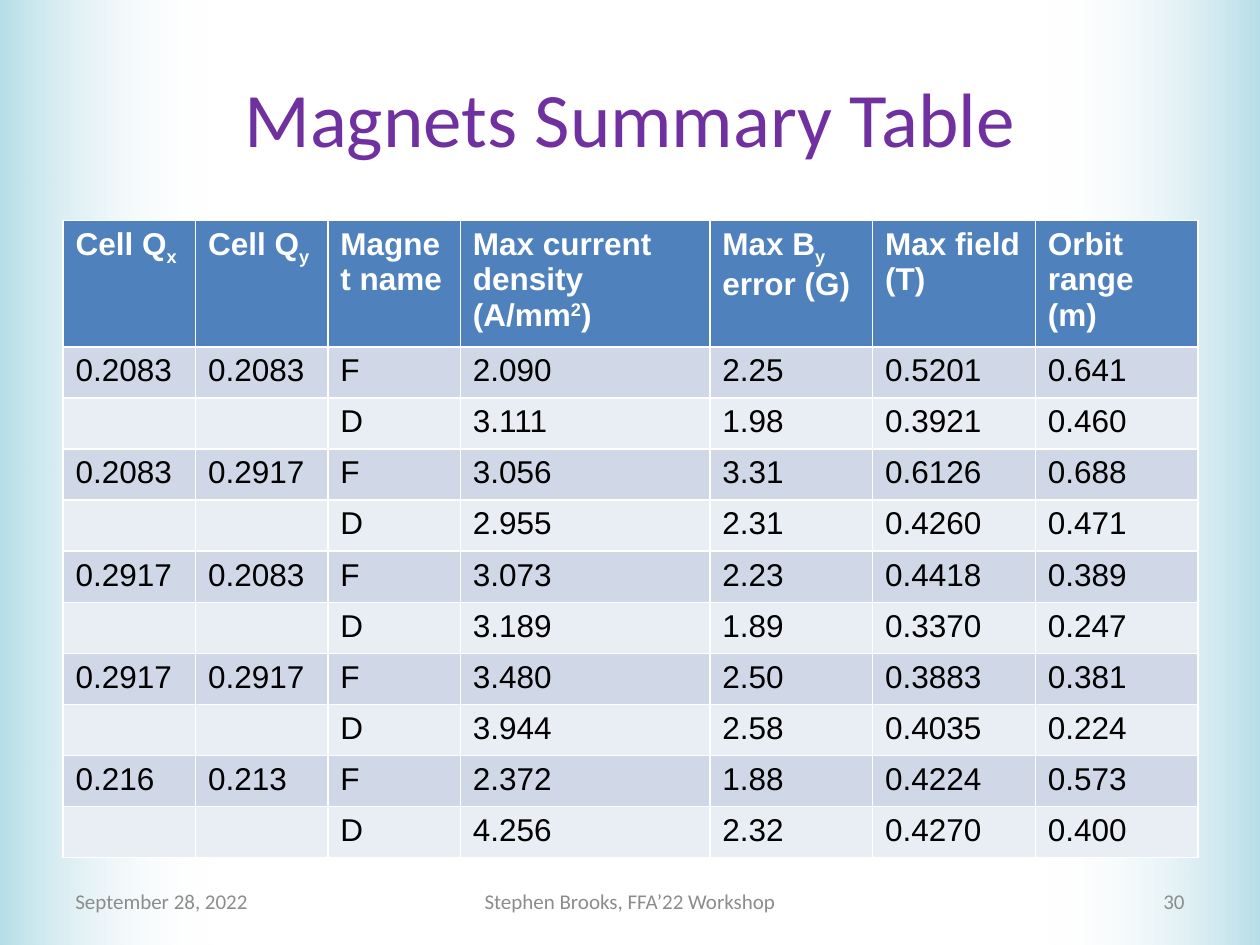
from lxml.etree import SubElement
from pptx import Presentation
from pptx.dml.color import RGBColor
from pptx.enum.shapes import MSO_SHAPE as Shape
from pptx.enum.text import MSO_ANCHOR as Anchor, PP_ALIGN as Align
from pptx.oxml.ns import qn
from pptx.util import Cm, Pt

HEADERS = [
    [("Cell Q", 0), ("x", -25)],
    [("Cell Q", 0), ("y", -25)],
    [("Magnet name", 0)],
    [("Max current density (A/mm", 0), ("2", 30), (")", 0)],
    [("Max B", 0), ("y", -25), (" error (G)", 0)],
    [("Max field (T)", 0)],
    [("Orbit range (m)", 0)],
]
MAGNETS = [
    ("0.2083", "0.2083", "F", "2.090", "2.25", "0.5201", "0.641"),
    ("", "", "D", "3.111", "1.98", "0.3921", "0.460"),
    ("0.2083", "0.2917", "F", "3.056", "3.31", "0.6126", "0.688"),
    ("", "", "D", "2.955", "2.31", "0.4260", "0.471"),
    ("0.2917", "0.2083", "F", "3.073", "2.23", "0.4418", "0.389"),
    ("", "", "D", "3.189", "1.89", "0.3370", "0.247"),
    ("0.2917", "0.2917", "F", "3.480", "2.50", "0.3883", "0.381"),
    ("", "", "D", "3.944", "2.58", "0.4035", "0.224"),
    ("0.216", "0.213", "F", "2.372", "1.88", "0.4224", "0.573"),
    ("", "", "D", "4.256", "2.32", "0.4270", "0.400"),
]
COLUMN_WIDTHS = [2.67] * 3 + [5.03] + [3.28] * 3
HEADER_HEIGHT, ROW_HEIGHT = 2.38, 1.03


def color(value):
    return RGBColor.from_string(value)


class SlideWriter:
    heading_font, table_font = "Calibri", "Arial"
    edge, header_fill, bands = "B7DEE8", "4F81BD", ("D0D8E8", "E9EDF4")
    white, black, purple, gray = "FFFFFF", "000000", "7030A0", "8C8C8C"

    def __init__(self, page):
        self.page = page

    def span(self, para, text, font, size, ink, bold=False, baseline=0):
        span = para.add_run()
        span.text = text
        span.font.name, span.font.size, span.font.bold = font, Pt(size), bold
        span.font.color.rgb = color(ink)
        if baseline:
            span.font._element.set("baseline", str(baseline * 1000))

    def side_fade(self, left, rotation=0):
        band = self.page.shapes.add_shape(Shape.RECTANGLE, Cm(left), 0, Cm(4.29), Cm(19.05))
        band.rotation = rotation
        band.shadow.inherit = False
        band.line.fill.background()
        band.fill.gradient()
        band.fill.gradient_angle = 0
        for stop, tint in zip(band.fill.gradient_stops, (self.edge, self.white)):
            stop.color.rgb = color(tint)
        clear = list(band._element.iter(qn("a:srgbClr")))[-1]
        SubElement(clear, qn("a:alpha")).set("val", "0")

    def text(self, left, top, width, height, words, size, ink, align):
        box = self.page.shapes.add_textbox(Cm(left), Cm(top), Cm(width), Cm(height))
        frame = box.text_frame
        frame.word_wrap = True
        frame.vertical_anchor = Anchor.MIDDLE
        para = frame.paragraphs[0]
        para.alignment = align
        self.span(para, words, self.heading_font, size, ink)

    def cell(self, cell, spans, fill, ink, bold=False):
        cell.fill.solid()
        cell.fill.fore_color.rgb = color(fill)
        para = cell.text_frame.paragraphs[0]
        para.font.size = Pt(18)
        for words, baseline in spans:
            self.span(para, words, self.table_font, 18, ink, bold, baseline)

    def table(self, left, top, widths, headers, rows):
        heights = [HEADER_HEIGHT] + [ROW_HEIGHT] * len(rows)
        table = self.page.shapes.add_table(
            len(heights), len(widths), Cm(left), Cm(top), Cm(sum(widths)), Cm(sum(heights))
        ).table
        for column, width in zip(table.columns, widths):
            column.width = Cm(width)
        for row, height in zip(table.rows, heights):
            row.height = Cm(height)
        for column, spans in enumerate(headers):
            self.cell(table.cell(0, column), spans, self.header_fill, self.white, True)
        for index, values in enumerate(rows):
            for column, value in enumerate(values):
                spans = [(value, 0)] if value else []
                self.cell(table.cell(index + 1, column), spans, self.bands[index % 2], self.black)


def main():
    deck = Presentation()
    deck.slide_width, deck.slide_height = Cm(25.4), Cm(19.05)
    writer = SlideWriter(deck.slides.add_slide(deck.slide_layouts[6]))
    writer.side_fade(21.11, 180)
    writer.side_fade(0)
    writer.text(1.27, 0.76, 22.86, 3.18, "Magnets Summary Table", 44, writer.purple, Align.CENTER)
    writer.table(1.27, 4.45, COLUMN_WIDTHS, HEADERS, MAGNETS)
    for left, width, words, align in [
        (1.27, 5.93, "September 28, 2022", Align.LEFT),
        (8.68, 8.04, "Stephen Brooks, FFA’22 Workshop", Align.CENTER),
        (18.2, 5.93, "30", Align.RIGHT),
    ]:
        writer.text(left, 17.66, width, 1.01, words, 12, writer.gray, align)
    deck.save("out.pptx")


if __name__ == "__main__":
    main()
